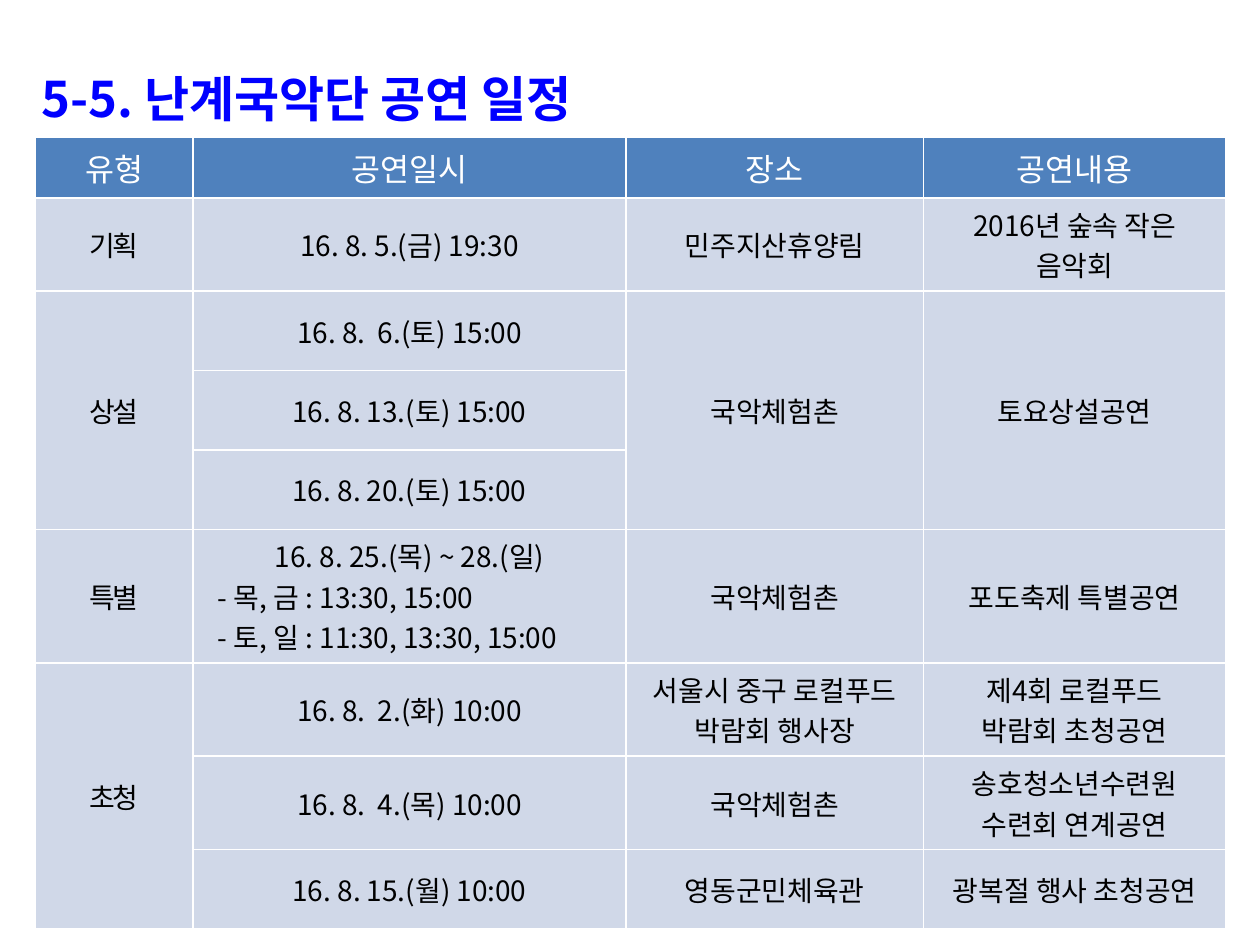
"""Build the performance schedule slide of the Nangye traditional music troupe."""
from dataclasses import dataclass

from lxml import etree
from pptx import Presentation
from pptx import util as u
from pptx.dml.color import RGBColor
from pptx.enum import text
from pptx.oxml.ns import qn

FONT = "Noto Sans CJK KR"
COLORS = {"title": "0000FF", "header": "4F81BD", "body": "D0D8E8", "light": "FFFFFF", "dark": "000000"}
COLUMN_WIDTHS = [1.25, 3.44, 2.36, 2.4]
ROW_HEIGHTS = [0.48] + [0.63] * 4 + [0.44] + [0.63] * 3


@dataclass
class Style:
    size: float
    color: str
    bold: bool = False
    spacing: float = 0


@dataclass
class Entry:
    row: int
    column: int
    words: str
    row_span: int = 1


HEADER = Style(18, "light")
KIND = Style(16, "dark", spacing=-1.5)
BODY = Style(16, "dark")
TITLE = Style(28, "title", bold=True)

ENTRIES = [
    *(Entry(0, column, words) for column, words in enumerate(["유형", "공연일시", "장소", "공연내용"])),
    Entry(1, 0, "기획"),
    Entry(1, 1, "16. 8. 5.(금) 19:30"),
    Entry(1, 2, "민주지산휴양림"),
    Entry(1, 3, "2016년 숲속 작은\n음악회"),
    Entry(2, 0, "상설", 3),
    Entry(2, 1, "16. 8.  6.(토) 15:00"),
    Entry(2, 2, "국악체험촌", 3),
    Entry(2, 3, "토요상설공연", 3),
    Entry(3, 1, "16. 8. 13.(토) 15:00"),
    Entry(4, 1, "16. 8. 20.(토) 15:00"),
    Entry(5, 0, "특별"),
    Entry(5, 1, "16. 8. 25.(목) ~ 28.(일)\n- 목, 금 : 13:30, 15:00\n- 토, 일 : 11:30, 13:30, 15:00"),
    Entry(5, 2, "국악체험촌"),
    Entry(5, 3, "포도축제 특별공연"),
    Entry(6, 0, "초청", 3),
    Entry(6, 1, "16. 8.  2.(화) 10:00"),
    Entry(6, 2, "서울시 중구 로컬푸드\n박람회 행사장"),
    Entry(6, 3, "제4회 로컬푸드\n박람회 초청공연"),
    Entry(7, 1, "16. 8.  4.(목) 10:00"),
    Entry(7, 2, "국악체험촌"),
    Entry(7, 3, "송호청소년수련원\n수련회 연계공연"),
    Entry(8, 1, "16. 8. 15.(월) 10:00"),
    Entry(8, 2, "영동군민체육관"),
    Entry(8, 3, "광복절 행사 초청공연"),
]


def format_spans(para, style: Style) -> None:
    """Apply a text style to every run of a paragraph."""
    for span in para.runs:
        font = span.font
        font.name, font.size, font.bold = FONT, u.Pt(style.size), style.bold
        font.color.rgb = RGBColor.from_string(COLORS[style.color])
        properties = span._r.get_or_add_rPr()
        etree.SubElement(properties, qn("a:ea")).set("typeface", FONT)
        if style.spacing:
            properties.set("spc", str(int(style.spacing * 100)))


def add_title(page, words: str) -> None:
    """Fill and place the title placeholder."""
    box = page.shapes.title
    box.left, box.top, box.width, box.height = map(u.Inches, (0.23, 0.31, 9.61, 2.81))
    frame = box.text_frame
    frame.text = words
    frame.word_wrap = True
    frame.auto_size = text.MSO_AUTO_SIZE.NONE
    frame.vertical_anchor = text.MSO_ANCHOR.TOP
    para = frame.paragraphs[0]
    para.alignment = text.PP_ALIGN.LEFT
    para.line_spacing = 1.4
    format_spans(para, TITLE)


def fill_entry(table, entry: Entry) -> None:
    """Write one table entry, merging down over its rows."""
    cell = table.cell(entry.row, entry.column)
    if entry.row_span > 1:
        cell.merge(table.cell(entry.row + entry.row_span - 1, entry.column))
    style = HEADER if entry.row == 0 else KIND if entry.column == 0 else BODY
    cell.text_frame.text = entry.words
    cell.vertical_anchor = text.MSO_ANCHOR.MIDDLE
    for para in cell.text_frame.paragraphs:
        para.alignment = text.PP_ALIGN.CENTER
        if para.text.startswith("-"):
            para.alignment = text.PP_ALIGN.LEFT
            para._p.get_or_add_pPr().set("marL", str(u.Inches(0.1)))
        format_spans(para, style)


def add_schedule(page) -> None:
    """Add the schedule table."""
    frame = page.shapes.add_table(
        len(ROW_HEIGHTS), len(COLUMN_WIDTHS), u.Inches(0.28), u.Inches(1.09),
        u.Inches(sum(COLUMN_WIDTHS)), u.Inches(sum(ROW_HEIGHTS)))
    table = frame.table
    table.horz_banding = False
    for column, width in zip(table.columns, COLUMN_WIDTHS):
        column.width = u.Inches(width)
    for index, (row, height) in enumerate(zip(table.rows, ROW_HEIGHTS)):
        row.height = u.Inches(height)
        for cell in row.cells:
            cell.fill.solid()
            cell.fill.fore_color.rgb = RGBColor.from_string(COLORS["body" if index else "header"])
    for entry in ENTRIES:
        fill_entry(table, entry)


def main() -> None:
    """Build and save the deck."""
    deck = Presentation()
    deck.slide_width, deck.slide_height = u.Inches(10), u.Inches(7.5)
    page = deck.slides.add_slide(deck.slide_layouts.get_by_name("Title Only"))
    add_title(page, "5-5. 난계국악단 공연 일정")
    add_schedule(page)
    deck.save("out.pptx")


if __name__ == "__main__":
    main()
